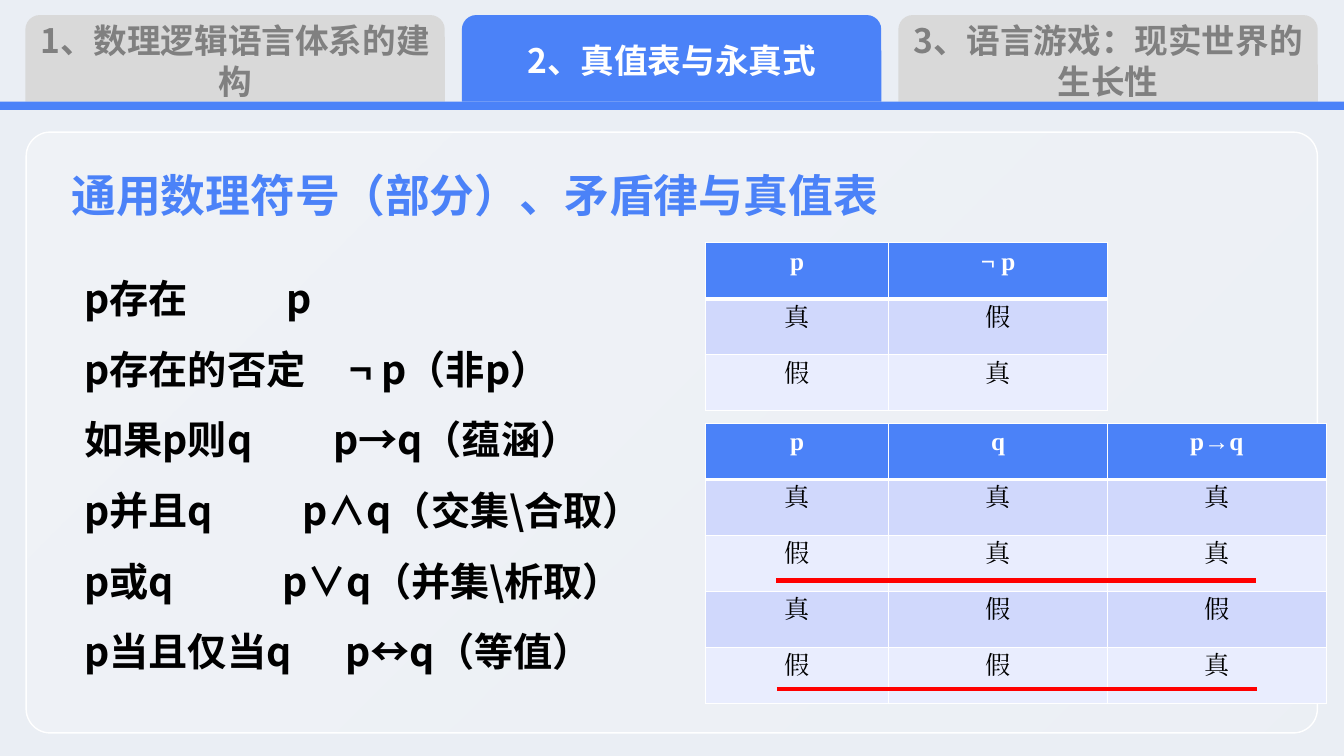
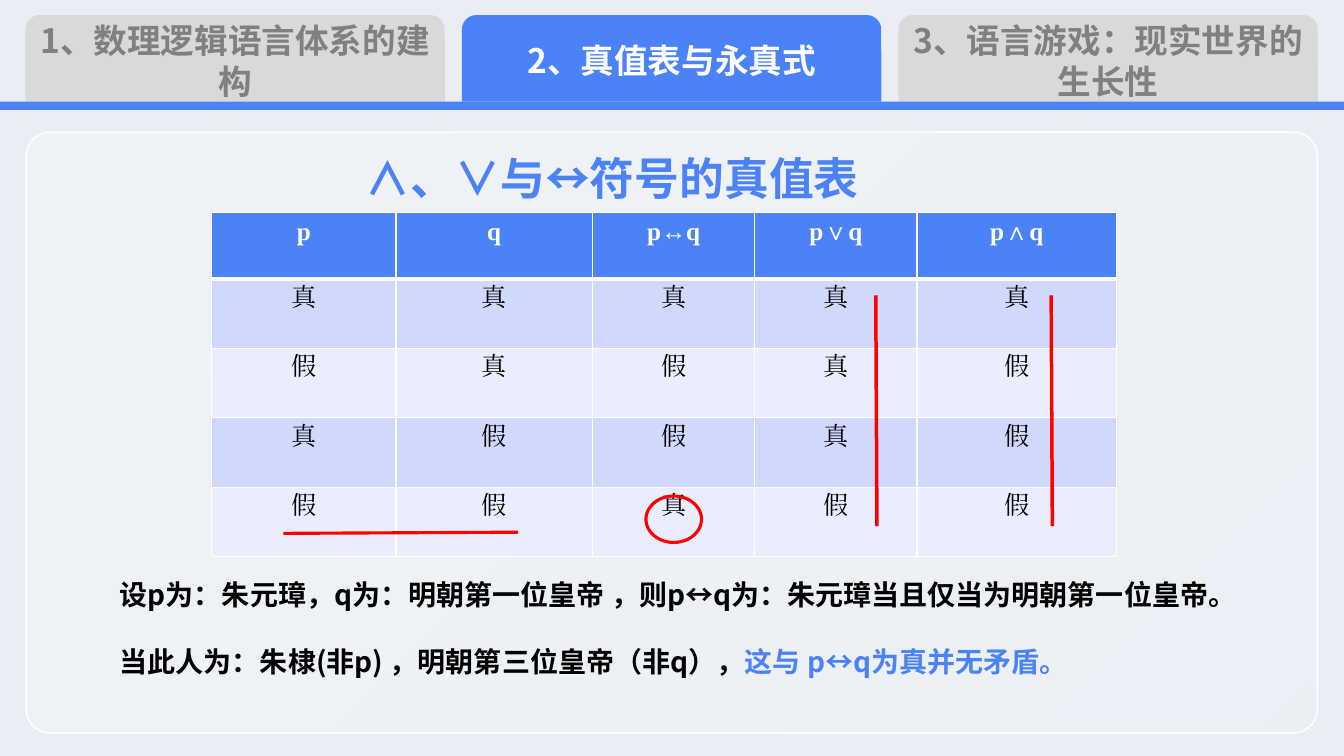
from dataclasses import dataclass

from lxml import etree
from pptx import Presentation
from pptx.dml.color import RGBColor
from pptx.enum import shapes, text
from pptx.oxml import ns
from pptx.util import Cm, Pt


@dataclass(frozen=True)
class Theme:
    back: str = "EAEEF4"
    blue: str = "4B82F8"
    white: str = "FFFFFF"
    black: str = "000000"
    gray: str = "808080"
    idle: str = "D9D9D9"
    red: str = "FF0000"
    bands: tuple = ("E9EDFE", "D0D8FC")
    sans: str = "Noto Sans CJK SC"
    serif: str = "Times New Roman"
    title: int = 32
    body: int = 28
    tab: int = 24
    note: int = 20
    cell: int = 18


look = Theme()
rgb = RGBColor.from_string
kinds = shapes.MSO_SHAPE
center = text.PP_ALIGN.CENTER
middle = text.MSO_ANCHOR.MIDDLE


def add_run(par, words, size, color, face=look.sans, bold=True):
    run = par.add_run()
    run.text = words
    font = run.font
    font.size, font.bold, font.name = Pt(size), bold, face
    font.color.rgb = rgb(color)
    props = run._r.get_or_add_rPr()
    props.set("lang", "zh-CN")
    etree.SubElement(props, ns.qn("a:ea"), typeface=face)


def add_box(page, x, y, w, h):
    frame = page.shapes.add_textbox(Cm(x), Cm(y), Cm(w), Cm(h)).text_frame
    frame.word_wrap = True
    return frame


deck = Presentation()
deck.slide_width, deck.slide_height = Cm(33.87), Cm(19.05)

# Shared frame: background, panel, tabs, bar, title
tabs = ["1、数理逻辑语言体系的建构", "2、真值表与永真式", "3、语言游戏：现实世界的生长性"]
active = 1
titles = [
    ("通用数理符号（部分）、矛盾律与真值表", 1.55, 3.91, None),
    ("∧、∨与↔符号的真值表", 1.73, 3.48, center),
]
pages = []
for words, x, y, align in titles:
    page = deck.slides.add_slide(deck.slide_layouts[6])
    pages.append(page)
    page.background.fill.solid()
    page.background.fill.fore_color.rgb = rgb(look.back)

    panel = page.shapes.add_shape(
        kinds.ROUNDED_RECTANGLE, Cm(0.66), Cm(3.33), Cm(32.54), Cm(15.14))
    panel.adjustments[0] = 0.04
    panel.shadow.inherit = False
    panel.fill.gradient()
    panel.fill.gradient_angle = 315
    for stop in panel.fill.gradient_stops:
        stop.color.rgb = rgb(look.white)
    tints = panel.element.spPr.findall(".//" + ns.qn("a:gs"))
    for tint, alpha in zip(tints, (30000, 10000)):
        etree.SubElement(tint[0], ns.qn("a:alpha"), val=str(alpha))
    panel.line.color.rgb = rgb(look.white)
    panel.line.width = Pt(1)

    for i, label in enumerate(tabs):
        tab = page.shapes.add_shape(
            kinds.ROUND_2_SAME_RECTANGLE,
            Cm(0.64 + 11 * i), Cm(0.38), Cm(10.57), Cm(2.18))
        tab.shadow.inherit = False
        tab.fill.solid()
        tab.fill.fore_color.rgb = rgb(look.blue if i == active else look.idle)
        tab.line.fill.background()
        tab.text_frame.vertical_anchor = middle
        par = tab.text_frame.paragraphs[0]
        par.alignment = center
        add_run(par, label, look.tab, look.white if i == active else look.gray)

    bar = page.shapes.add_shape(
        kinds.RECTANGLE, 0, Cm(2.56), deck.slide_width, Cm(0.21))
    bar.shadow.inherit = False
    bar.fill.solid()
    bar.fill.fore_color.rgb = rgb(look.blue)
    bar.line.fill.background()

    head = add_box(page, x, y, 27.41, 2.16)
    head.vertical_anchor = middle
    par = head.paragraphs[0]
    par.alignment, par.line_spacing = align, 0.9
    add_run(par, words, look.title, look.blue)

signs, proof = pages

# Symbol list: phrase, formula, tab stop in cm
rules = [
    ("p存在", "p", 5.09),
    ("p存在的否定", "¬ p（非p）", 6.68),
    ("如果p则q", "p→q（蕴涵）", 6.27),
    ("p并且q", "p∧q（交集\\合取）", 5.49),
    ("p或q", "p∨q（并集\\析取）", 4.99),
    ("p当且仅当q", "p↔q（等值）", 6.58),
]
frame = add_box(signs, 1.88, 6.2, 17.73, 11.81)
for i, (phrase, sign, place) in enumerate(rules):
    par = frame.add_paragraph() if i else frame.paragraphs[0]
    par.line_spacing = 1.5
    stops = etree.SubElement(par._p.get_or_add_pPr(), ns.qn("a:tabLst"))
    etree.SubElement(stops, ns.qn("a:tab"), pos=str(Cm(place)), algn="l")
    add_run(par, f"{phrase}\t{sign}", look.body, look.black)

# Truth tables: page, left, top, column widths, head height, row height, rows
tables = [
    (signs, 17.78, 10.67, (4.62, 5.51, 5.51), 1.41, 1.41,
     ["p q p→q", "真 真 真", "假 真 真", "真 假 假", "假 假 真"]),
    (signs, 17.78, 6.12, (4.62, 5.51), 1.41, 1.41,
     ["p ¬\u00a0p".replace("\u00a0", "_"), "真 假", "假 真"]),
    (proof, 5.33, 5.36, (4.65, 4.95, 4.09, 4.09, 5.03), 1.67, 1.75,
     ["p q p↔q p∨q p∧q", "真 真 真 真 真", "假 真 假 真 假",
      "真 假 假 真 假", "假 假 真 假 假"]),
]
for page, x, y, cols, top, high, rows in tables:
    grid = page.shapes.add_table(
        len(rows), len(cols), Cm(x), Cm(y), Cm(sum(cols)),
        Cm(top + high * (len(rows) - 1))).table
    for col, wide in zip(grid.columns, cols):
        col.width = Cm(wide)
    for r, row in enumerate(rows):
        grid.rows[r].height = Cm(high if r else top)
        for c, word in enumerate(row.split()):
            cell = grid.cell(r, c)
            props = cell._tc.get_or_add_tcPr()
            for side in ("lnL", "lnR", "lnT", "lnB"):
                thick = (r, side) in ((0, "lnB"), (1, "lnT"))
                edge = etree.SubElement(
                    props, ns.qn("a:" + side), w=str(Pt(3 if thick else 1)))
                fill = etree.SubElement(edge, ns.qn("a:solidFill"))
                etree.SubElement(fill, ns.qn("a:srgbClr"), val=look.white)
            cell.fill.solid()
            cell.fill.fore_color.rgb = rgb(look.bands[r % 2] if r else look.blue)
            par = cell.text_frame.paragraphs[0]
            par.alignment = center
            add_run(par, word.replace("_", " "), look.cell,
                    look.black if r else look.white, look.serif, r == 0)

# Red marks: page, from, to, width
marks = [
    (signs, 19.56, 14.63, 31.65, 14.63, 3),
    (signs, 19.58, 17.37, 31.67, 17.37, 3),
    (proof, 22.07, 7.44, 22.1, 13.26, 2.5),
    (proof, 26.49, 7.44, 26.52, 13.26, 2.5),
    (proof, 7.14, 13.44, 13.06, 13.41, 2.25),
]
for page, *ends, wide in marks:
    mark = page.shapes.add_connector(
        shapes.MSO_CONNECTOR.STRAIGHT, *[Cm(end) for end in ends])
    mark.line.color.rgb = rgb(look.red)
    mark.line.width = Pt(wide)
    etree.SubElement(mark.element.spPr, ns.qn("a:effectLst"))

ring = proof.shapes.add_shape(kinds.OVAL, Cm(16.28), Cm(12.5), Cm(1.4), Cm(1.17))
ring.shadow.inherit = False
ring.fill.background()
ring.line.color.rgb = rgb(look.red)
ring.line.width = Pt(2.25)

# Example below the table
notes = [
    [("设p为：朱元璋，q为：明朝第一位皇帝 ，则p↔q为：朱元璋当且仅当为明朝第一位皇帝。",
      look.black)],
    [("当此人为：朱棣(非p) ，明朝第三位皇帝（非q），", look.black),
     ("这与 p↔q为真并无矛盾。", look.blue)],
]
frame = add_box(proof, 2.77, 14.43, 28.7, 3.58)
for i, parts in enumerate(notes):
    par = frame.add_paragraph() if i else frame.paragraphs[0]
    par.space_before = Pt(24 * i)
    for words, color in parts:
        add_run(par, words, look.note, color)

deck.save("out.pptx")
